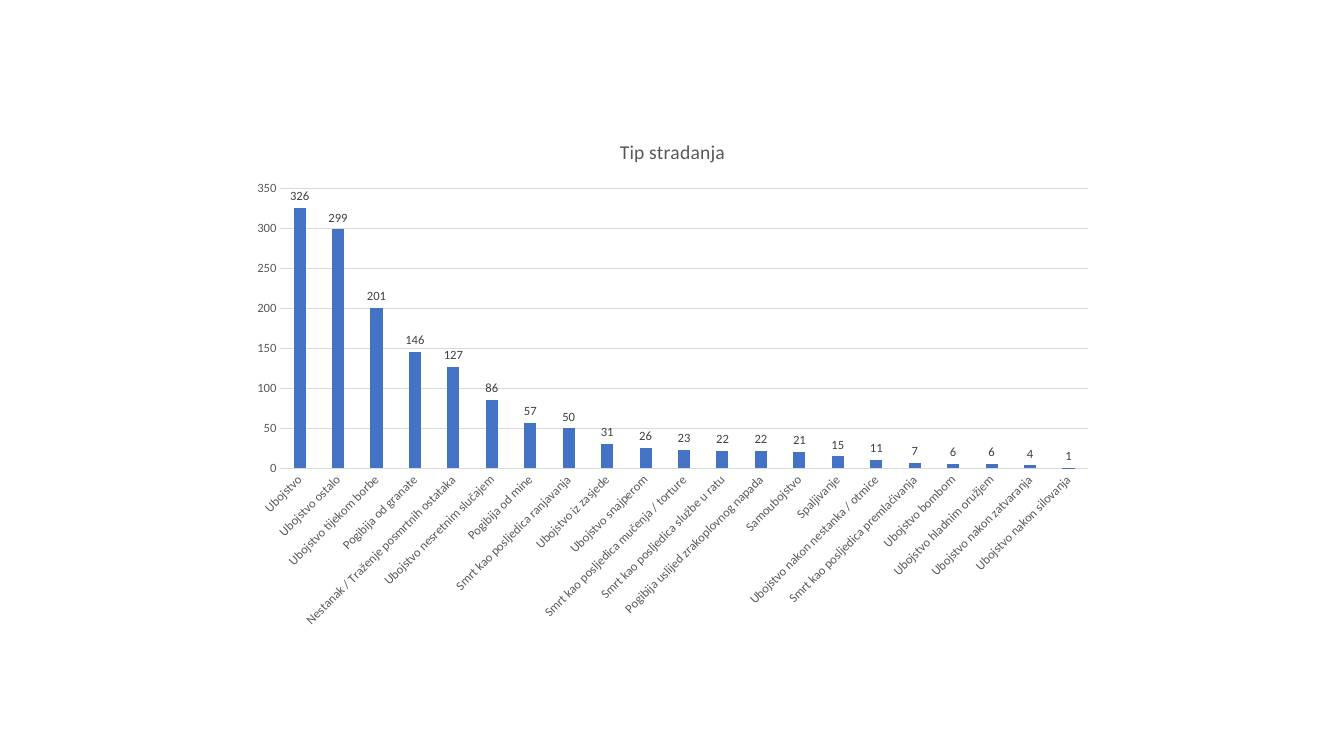
from pptx import Presentation
from pptx import util as u
from pptx.chart.data import CategoryChartData
from pptx.dml.color import RGBColor
from pptx.enum import chart as ch

WIDE, HIGH = u.Inches(13.33), u.Inches(7.5)
BLUE = RGBColor(0x44, 0x72, 0xC4)
DARK = RGBColor(0x40, 0x40, 0x40)
GREY = RGBColor(0x59, 0x59, 0x59)
PALE = RGBColor(0xD9, 0xD9, 0xD9)
TITLE = "Tip stradanja"
DEATHS = {
    "Ubojstvo": 326,
    "Ubojstvo ostalo": 299,
    "Ubojstvo tijekom borbe": 201,
    "Pogibija od granate": 146,
    "Nestanak / Traženje posmrtnih ostataka": 127,
    "Ubojstvo nesretnim slučajem": 86,
    "Pogibija od mine": 57,
    "Smrt kao posljedica ranjavanja": 50,
    "Ubojstvo iz zasjede": 31,
    "Ubojstvo snajperom": 26,
    "Smrt kao posljedica mučenja / torture": 23,
    "Smrt kao posljedica službe u ratu": 22,
    "Pogibija uslijed zrakoplovnog napada": 22,
    "Samoubojstvo": 21,
    "Spaljivanje": 15,
    "Ubojstvo nakon nestanka / otmice": 11,
    "Smrt kao posljedica premlaćivanja": 7,
    "Ubojstvo bombom": 6,
    "Ubojstvo hladnim oružjem": 6,
    "Ubojstvo nakon zatvaranja": 4,
    "Ubojstvo nakon silovanja": 1,
}


def put(item, **form):
    """Set each format value on the item."""
    for name, value in form.items():
        setattr(item, name, value)


def style(font, size, color):
    put(font, name="Calibri", size=u.Pt(size), bold=False)
    font.color.rgb = color


def rule(line):
    line.width = u.Pt(0.75)
    line.color.rgb = PALE


def add_bars(slide):
    data = CategoryChartData()
    data.categories = DEATHS.keys()
    data.add_series("Series 1", DEATHS.values())
    frame = slide.shapes.add_chart(
        ch.XL_CHART_TYPE.COLUMN_CLUSTERED,
        u.Inches(2.38), u.Inches(1.18), u.Inches(8.58), u.Inches(5.15), data)
    return frame.chart


def set_title(chart):
    frame = chart.chart_title.text_frame
    frame.text = TITLE
    style(frame.paragraphs[0].runs[0].font, 14, GREY)
    chart.chart_title.include_in_layout = False


def set_axes(chart):
    for axis in (chart.category_axis, chart.value_axis):
        put(axis, major_tick_mark=ch.XL_TICK_MARK.NONE,
            minor_tick_mark=ch.XL_TICK_MARK.NONE)
        style(axis.tick_labels.font, 9, GREY)
    cats, vals = chart.category_axis, chart.value_axis
    rule(cats.format.line)
    # Slant the names upwards by 45 degrees
    cats._element.txPr.bodyPr.set("rot", str(-45 * 60000))
    put(vals, minimum_scale=0, maximum_scale=350, major_unit=50)
    vals.format.line.fill.background()
    rule(vals.major_gridlines.format.line)


def set_bars(chart):
    plot = chart.plots[0]
    put(plot, gap_width=219, overlap=-27, vary_by_categories=False)
    bars = plot.series[0]
    bars.format.fill.solid()
    bars.format.fill.fore_color.rgb = BLUE
    put(bars.data_labels, show_value=True,
        position=ch.XL_LABEL_POSITION.OUTSIDE_END)
    style(bars.data_labels.font, 9, DARK)


def main():
    deck = Presentation()
    put(deck, slide_width=WIDE, slide_height=HIGH)
    slide = deck.slides.add_slide(deck.slide_layouts[6])
    chart = add_bars(slide)
    chart.has_legend = False
    put(chart.font, name="Calibri", size=u.Pt(10))
    set_title(chart)
    set_axes(chart)
    set_bars(chart)
    deck.save("out.pptx")


if __name__ == "__main__":
    main()
